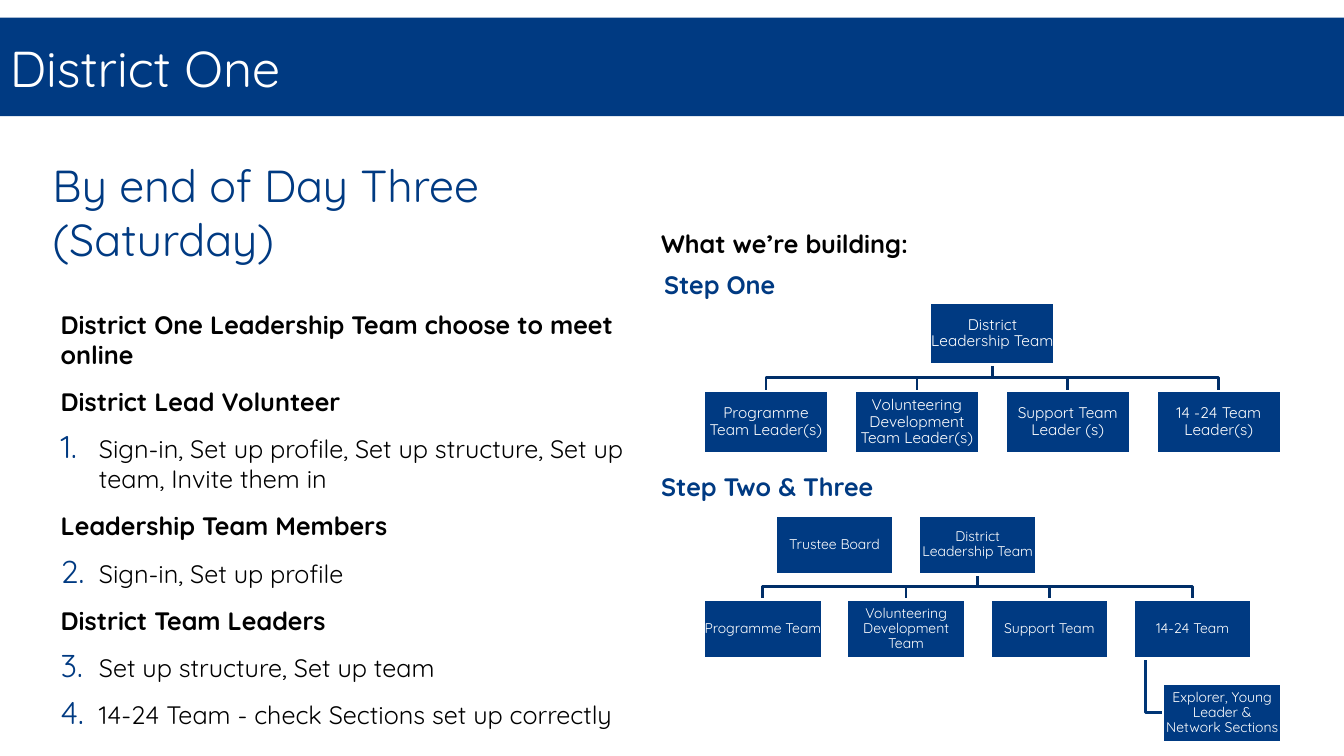
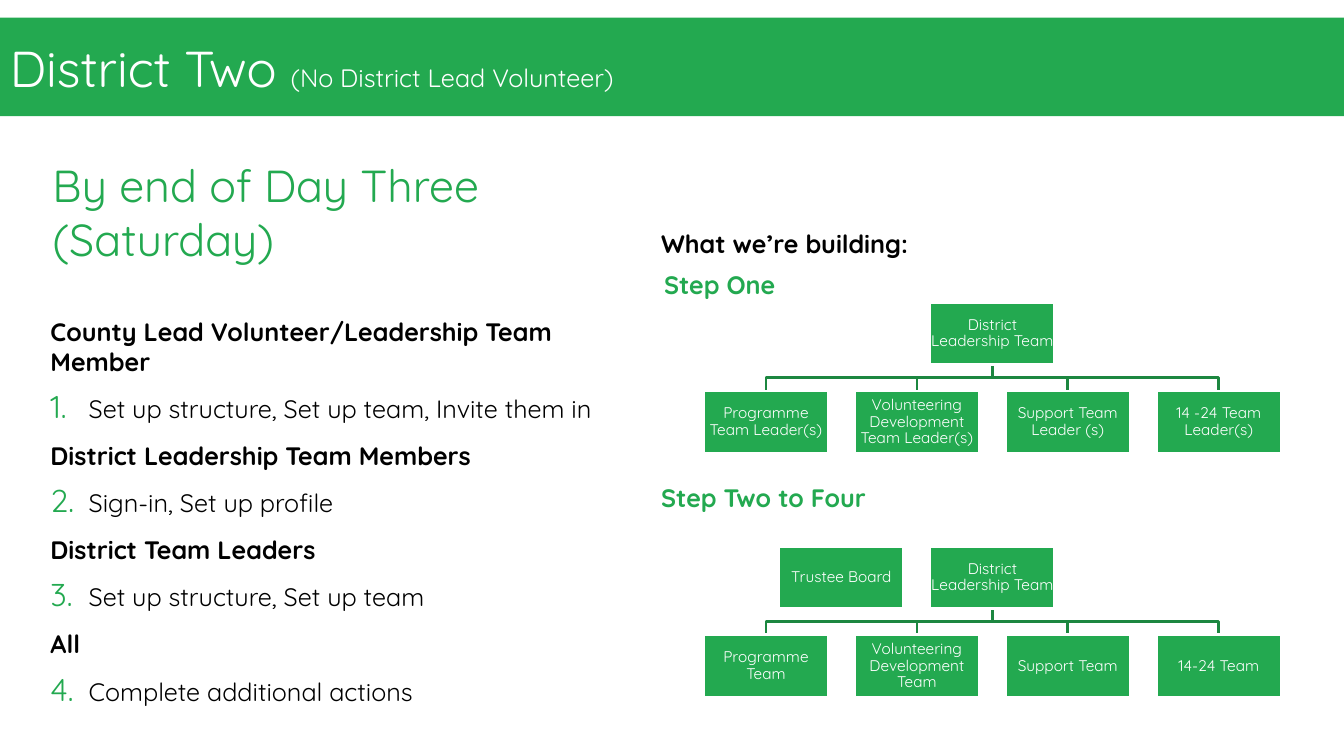
from lxml import etree
from pptx import Presentation
from pptx import util as u
from pptx.dml.color import RGBColor
from pptx.enum import shapes, text
from pptx.oxml.ns import qn

Pt = u.Pt
WHITE = RGBColor(0xFF, 0xFF, 0xFF)
BLACK = RGBColor(0, 0, 0)
BLUE = RGBColor(0x00, 0x3A, 0x82)
NAVY = RGBColor(0x00, 0x2E, 0x68)
STEM_BLUE = RGBColor(0x00, 0x35, 0x76)
GREEN = RGBColor(0x23, 0xA9, 0x50)
DARK_GREEN = RGBColor(0x1C, 0x87, 0x40)

FONT = "Quicksand"
WIDTH, HEIGHT = 960, 540
COLUMN_WIDTH = 427
CHART_LEFT = 502.6
WIDE, NARROW = 89.1, 84.55

LEADERS = ["Programme Team Leader(s)", "Volunteering Development Team Leader(s)",
           "Support Team Leader (s)", "14 -24 Team Leader(s)"]
TEAMS = ["Programme Team", "Volunteering Development Team", "Support Team", "14-24 Team"]
ROOT = "District Leadership Team"


class Deck:
    def __init__(self):
        self.deck = Presentation()
        self.deck.slide_width, self.deck.slide_height = Pt(WIDTH), Pt(HEIGHT)

    def add_page(self, colour, line_colour):
        self.page = self.deck.slides.add_slide(self.deck.slide_layouts[6])
        self.colour, self.line_colour = colour, line_colour

    def style(self, paragraph, size, colour, bold=False):
        font = paragraph.font
        font.name, font.size, font.bold = FONT, Pt(size), bold
        font.color.rgb = colour

    def frame(self, box, inset_x, inset_y, anchor=text.MSO_ANCHOR.TOP):
        """Set wrapping, insets and anchor, and return the text frame."""
        frame = box.text_frame
        frame.word_wrap = True
        frame.margin_left = frame.margin_right = Pt(inset_x)
        frame.margin_top = frame.margin_bottom = Pt(inset_y)
        frame.vertical_anchor = anchor
        return frame

    def text_box(self, left, top, width, height, inset_x, inset_y):
        box = self.page.shapes.add_textbox(Pt(left), Pt(top), Pt(width), Pt(height))
        frame = self.frame(box, inset_x, inset_y)
        frame.auto_size = text.MSO_AUTO_SIZE.SHAPE_TO_FIT_TEXT
        return frame

    def rectangle(self, left, top, width, height):
        box = self.page.shapes.add_shape(
            shapes.MSO_SHAPE.RECTANGLE, Pt(left), Pt(top), Pt(width), Pt(height))
        box.shadow.inherit = False
        box.fill.solid()
        box.fill.fore_color.rgb = self.colour
        return box

    def band(self, title, remark=""):
        box = self.rectangle(0, 12.5, WIDTH, 70.5)
        box.line.fill.background()
        para = self.frame(box, 7.2, 3.6, text.MSO_ANCHOR.MIDDLE).paragraphs[0]
        para.alignment = text.PP_ALIGN.LEFT
        para.add_run().text = title
        if remark:
            span = para.add_run()
            span.text = remark
            span.font.size = Pt(18)
        self.style(para, 36, WHITE)

    def heading(self, words):
        para = self.text_box(37.5, 112.5, COLUMN_WIDTH, 78, 0, 0).paragraphs[0]
        para.text = words
        self.style(para, 32, self.colour)

    def label(self, left, top, words, colour):
        para = self.text_box(left, top, 223, 29, 7.2, 3.6).paragraphs[0]
        para.text = words
        self.indent(para, 0.7, 0)
        self.style(para, 18, colour, True)

    def indent(self, para, left, first):
        properties = para._p.get_or_add_pPr()
        properties.set("marL", str(Pt(left)))
        properties.set("indent", str(Pt(first)))
        return properties

    def number(self, para, start):
        properties = self.indent(para, 28, -27.3)
        colour = etree.SubElement(properties, qn("a:buClr"))
        etree.SubElement(colour, qn("a:srgbClr"), val=str(self.colour))
        etree.SubElement(properties, qn("a:buSzPct"), val="125000")
        etree.SubElement(properties, qn("a:buAutoNum"), type="arabicPeriod", startAt=str(start))

    def steps(self, left, top, height, groups):
        """Bold headings, each with steps numbered on through all groups."""
        frame = self.text_box(left, top, COLUMN_WIDTH, height, 5.2, 2.6)
        start = 1
        for title, items in groups:
            for words in [title, *items]:
                is_title = words is title
                if is_title and title is groups[0][0]:
                    para = frame.paragraphs[0]
                else:
                    para = frame.add_paragraph()
                    para.space_before = Pt(6)
                para.text = words
                para.space_after = Pt(6)
                if is_title:
                    self.indent(para, 0.7, 0)
                else:
                    self.number(para, start)
                self.style(para, 18, BLACK, is_title)
            start += len(items)

    def elbow(self, points, colour):
        corners = [(Pt(x), Pt(y)) for x, y in points]
        builder = self.page.shapes.build_freeform(*corners[0])
        builder.add_line_segments(corners[1:], close=False)
        line = builder.convert_to_shape()
        line.shadow.inherit = False
        line.fill.background()
        line.line.color.rgb = colour
        line.line.width = Pt(2)

    def node(self, left, top, width, words, size):
        box = self.rectangle(left, top, width, width / 2)
        box.line.color.rgb = WHITE
        box.line.width = Pt(2)
        para = self.frame(box, 0.5, 0.5, text.MSO_ANCHOR.MIDDLE).paragraphs[0]
        para.text = words
        para.alignment = text.PP_ALIGN.CENTER
        para.line_spacing = 0.9
        self.style(para, size, WHITE)

    def organisation(self, top, width, size, children, board="", section=""):
        """Root over a row of children; a board beside it, a section under the last child."""
        gap = 0.21 * width
        pitch, drop = width + gap, width / 2 + gap
        root_left = CHART_LEFT + pitch * (len(children) - 1) / 2
        lefts = [CHART_LEFT + i * pitch for i in range(len(children))]
        root_x, root_bottom = root_left + width / 2, top + width / 2
        child_top = top + drop
        middle = root_bottom + gap / 2

        for left in reversed(lefts):
            x = left + width / 2
            self.elbow([(root_x, root_bottom), (root_x, middle), (x, middle), (x, child_top)],
                       self.line_colour)
        nodes = [(root_left, top, ROOT)]
        nodes += [(left, child_top, words) for left, words in zip(lefts, children)]
        if board:
            nodes.append((root_left - pitch, top, board))
        if section:
            stem_x, section_left = lefts[-1] + 0.1 * width, lefts[-1] + 0.25 * width
            section_top = child_top + drop
            section_y = section_top + width / 4
            self.elbow([(stem_x, child_top + width / 2), (stem_x, section_y),
                        (section_left, section_y)], STEM_BLUE)
            nodes.append((section_left, section_top, section))
        for left, node_top, words in nodes:
            self.node(left, node_top, width, words, size)

    def shared_content(self):
        self.heading("By end of Day Three (Saturday)")
        self.label(464.4, 159.8, "What we’re building:", BLACK)
        self.label(466.5, 188.6, "Step One", self.colour)
        self.organisation(216, WIDE, 11, LEADERS)


def main():
    deck = Deck()

    deck.add_page(BLUE, NAVY)
    deck.band("District One")
    deck.shared_content()
    deck.steps(37.5, 218.2, 308, [
        ("District One Leadership Team choose to meet online", []),
        ("District Lead Volunteer",
         ["Sign-in, Set up profile, Set up structure, Set up team, Invite them in"]),
        ("Leadership Team Members", ["Sign-in, Set up profile"]),
        ("District Team Leaders",
         ["Set up structure, Set up team", "14-24 Team - check Sections set up correctly"]),
    ])
    deck.label(464.4, 333.4, "Step Two & Three", BLUE)
    deck.organisation(368, NARROW, 10, TEAMS, "Trustee Board",
                      "Explorer, Young Leader & Network Sections")

    deck.add_page(GREEN, DARK_GREEN)
    deck.band("District Two ", "(No District Lead Volunteer)")
    deck.shared_content()
    deck.steps(30.2, 223.2, 265, [
        ("County Lead Volunteer/Leadership Team Member",
         ["Set up structure, Set up team, Invite them in"]),
        ("District Leadership Team Members", ["Sign-in, Set up profile"]),
        ("District Team Leaders", ["Set up structure, Set up team"]),
        ("All", ["Complete additional actions"]),
    ])
    deck.label(464.4, 341.3, "Step Two to Four", GREEN)
    deck.organisation(390.2, WIDE, 11, TEAMS, "Trustee Board")

    deck.deck.save("out.pptx")


if __name__ == "__main__":
    main()
